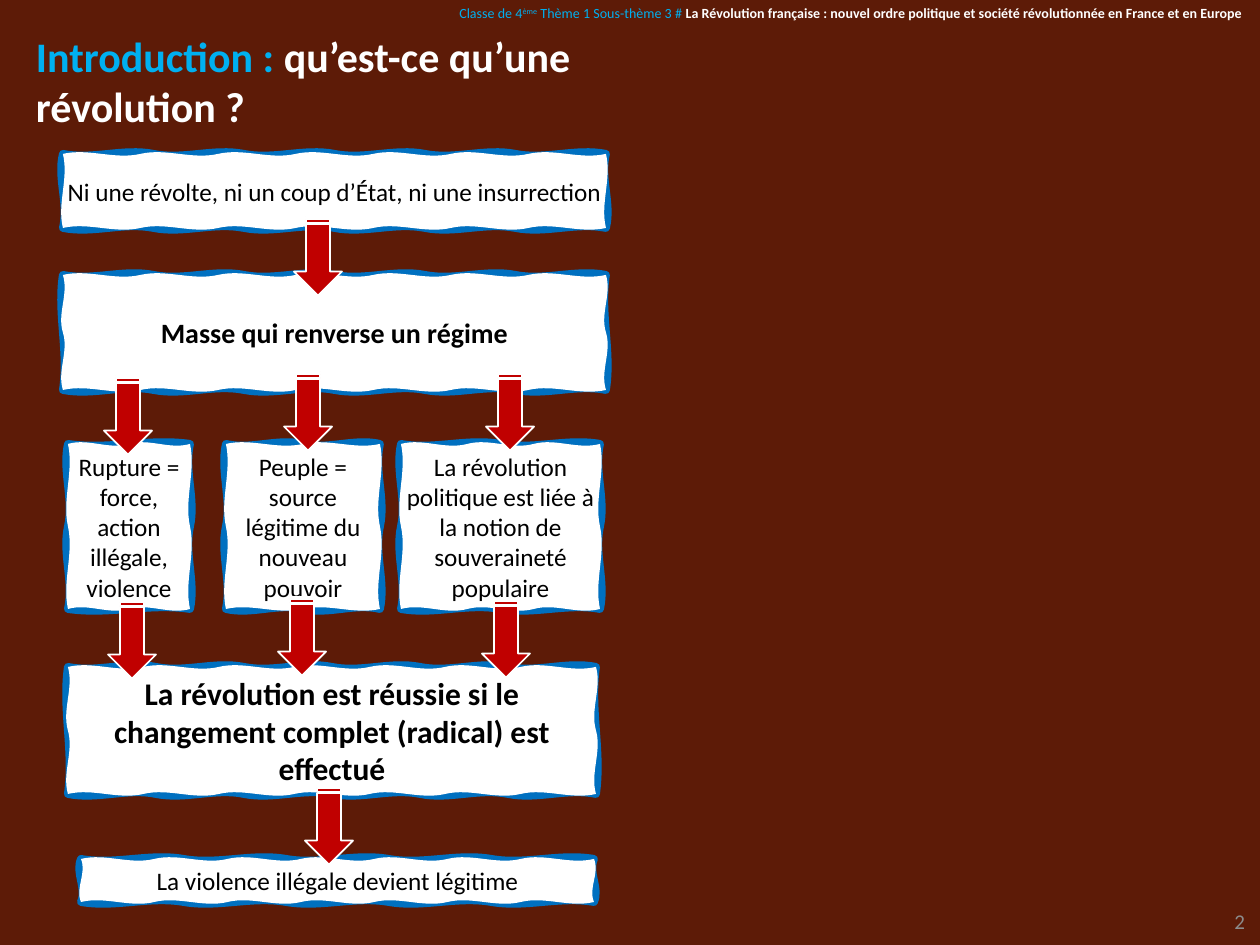
"""Build the slide that explains what a revolution is as a flow of boxes."""
from copy import deepcopy

from pptx import Presentation
from pptx.dml.color import RGBColor
from pptx.enum.shapes import MSO_SHAPE
from pptx.enum.text import MSO_ANCHOR, PP_ALIGN
from pptx.oxml.ns import qn
from pptx.util import Emu, Pt

SCALE = 914400 / 126
FONT = "Calibri"
COLORS = {
    "background": "5D1B07", "accent": "00B0F0", "white": "FFFFFF",
    "black": "000000", "border": "0070C0", "arrow": "C00000", "number": "8C8C8C",
}
SWING = 6
ARROW_LENGTH, ARROW_WIDTH = 79, 48
ROW_TOP, ROW_HEIGHT = 444, 165
BOXES = [
    (63, 154, 543, 74, "Ni une révolte, ni un coup d’État, ni une insurrection", 14.4, False),
    (63, 275, 543, 115, "Masse qui renverse un régime", 16, True),
    (68, ROW_TOP, 122, ROW_HEIGHT, "Rupture = force, action illégale, violence", 14.4, False),
    (226, ROW_TOP, 154, ROW_HEIGHT, "Peuple = source légitime du nouveau pouvoir", 14.4, False),
    (401, ROW_TOP, 199, ROW_HEIGHT,
     "La révolution politique est liée à la notion de souveraineté populaire", 14.4, False),
    (68, 667, 528, 127,
     "La révolution est réussie si le changement complet (radical) est effectué", 18, True),
    (81, 859, 513, 43, "La violence illégale devient légitime", 14.4, False),
]
ARROW_CENTERS = [
    (318, 256), (128, 415), (308, 411), (510, 411),
    (132, 639), (302, 636), (506, 638), (329, 825),
]


def px(value):
    """Turn pixels into EMU."""
    return Emu(round(value * SCALE))


def color(name):
    """Return a named colour."""
    return RGBColor.from_string(COLORS[name])


def add_span(para, text, size, tint, bold=False, baseline=0):
    """Add one formatted run to a paragraph."""
    span = para.add_run()
    span.text = text
    font = span.font
    font.name, font.size, font.bold = FONT, Pt(size), bold
    font.color.rgb = color(tint)
    if baseline:
        span._r.get_or_add_rPr().set("baseline", str(baseline))


def set_frame(shape, anchor, side, edge):
    """Set wrapping, anchor and margins, and return the first paragraph."""
    frame = shape.text_frame
    frame.word_wrap = True
    frame.vertical_anchor = anchor
    frame.margin_left = frame.margin_right = px(side)
    frame.margin_top = frame.margin_bottom = px(edge)
    return frame.paragraphs[0]


def add_text(page, left, top, width, height, spans, align=PP_ALIGN.LEFT,
             anchor=MSO_ANCHOR.MIDDLE, line_spacing=1.0):
    """Add a text box made of several spans."""
    box = page.shapes.add_textbox(px(left), px(top), px(width), px(height))
    para = set_frame(box, anchor, 13, 6)
    para.alignment = align
    para.line_spacing = line_spacing
    for span in spans:
        add_span(para, *span)


def wavy_outline(left, top, width, height, period, sign):
    """Return the start and the curve points of a rectangle with wavy sides."""
    sides = [
        (left, top, 1, 0, width), (left + width, top, 0, 1, height),
        (left + width, top + height, -1, 0, width), (left, top + height, 0, -1, height),
    ]
    points = [(px(left), px(top))]
    for x, y, across, down, length in sides:
        cycles = max(1, round(length / period))
        for step in range(1, 3 * cycles + 1):
            along = length * step / (3 * cycles)
            shift = sign * SWING * (0, 1, -1)[step % 3]
            points.append((px(x + across * along - down * shift),
                           px(y + down * along + across * shift)))
    return points


def bend(contour):
    """Turn each three straight segments of a contour into one curve."""
    lines = contour.findall(qn("a:lnTo"))
    for first, second, third in zip(lines[::3], lines[1::3], lines[2::3]):
        curve = contour.makeelement(qn("a:cubicBezTo"), {})
        first.addprevious(curve)
        for line in (first, second, third):
            curve.append(line[0])
            contour.remove(line)


def add_wavy_box(page, left, top, width, height, text, size, bold):
    """Add a hand-drawn box with separate border and fill outlines."""
    border = wavy_outline(left, top, width, height, 95, 1)
    inside = wavy_outline(left, top, width, height, 75, -1)
    builder = page.shapes.build_freeform(*border[0])
    builder.add_line_segments(border[1:])
    builder.move_to(*inside[0])
    builder.add_line_segments(inside[1:])
    box = builder.convert_to_shape()
    box.shadow.inherit = False
    box.fill.solid()
    box.fill.fore_color.rgb = color("white")
    box.line.color.rgb = color("border")
    box.line.width = Pt(4.5)

    outline = box._element.xpath(".//a:path")[0]
    filling = deepcopy(outline)
    outline.addnext(filling)
    half = len(border) + 1
    for child in list(outline)[half:]:
        outline.remove(child)
    for child in list(filling)[:half]:
        filling.remove(child)
    outline.set("fill", "none")
    filling.set("stroke", "0")
    bend(outline)
    bend(filling)

    para = set_frame(box, MSO_ANCHOR.MIDDLE, 13 - SWING, 0)
    para.alignment = PP_ALIGN.CENTER
    add_span(para, text, size, "black", bold)


def add_arrow(page, center_x, center_y):
    """Add a striped arrow that points down."""
    arrow = page.shapes.add_shape(
        MSO_SHAPE.STRIPED_RIGHT_ARROW, px(center_x - ARROW_LENGTH / 2),
        px(center_y - ARROW_WIDTH / 2), px(ARROW_LENGTH), px(ARROW_WIDTH))
    arrow.rotation = 90
    arrow.shadow.inherit = False
    arrow.fill.solid()
    arrow.fill.fore_color.rgb = color("arrow")
    arrow.line.color.rgb = color("white")
    arrow.line.width = Pt(1)


def main():
    """Build and save the deck."""
    deck = Presentation()
    deck.slide_width, deck.slide_height = px(1260), px(945)
    page = deck.slides.add_slide(deck.slide_layouts[6])
    page.background.fill.solid()
    page.background.fill.fore_color.rgb = color("background")

    for box in BOXES:
        add_wavy_box(page, *box)
    add_text(page, 23, 23, 591, 115, [
        ("Introduction : ", 24, "accent", True),
        ("qu’est-ce qu’une révolution ?", 24, "white", True),
    ])
    add_text(page, 0, 0, 1256, 47, [
        ("Classe de 4", 8, "accent"),
        ("ème", 8, "accent", False, 30000),
        (" Thème 1 Sous-thème 3 # ", 8, "accent"),
        ("La Révolution française : nouvel ordre politique et société "
         "révolutionnée en France et en Europe", 8, "white", True),
    ], PP_ALIGN.RIGHT, MSO_ANCHOR.TOP, 0.97)
    add_text(page, 974, 900, 284, 42, [("2", 12, "number")], PP_ALIGN.RIGHT)
    for center in ARROW_CENTERS:
        add_arrow(page, *center)
    deck.save("out.pptx")


if __name__ == "__main__":
    main()
